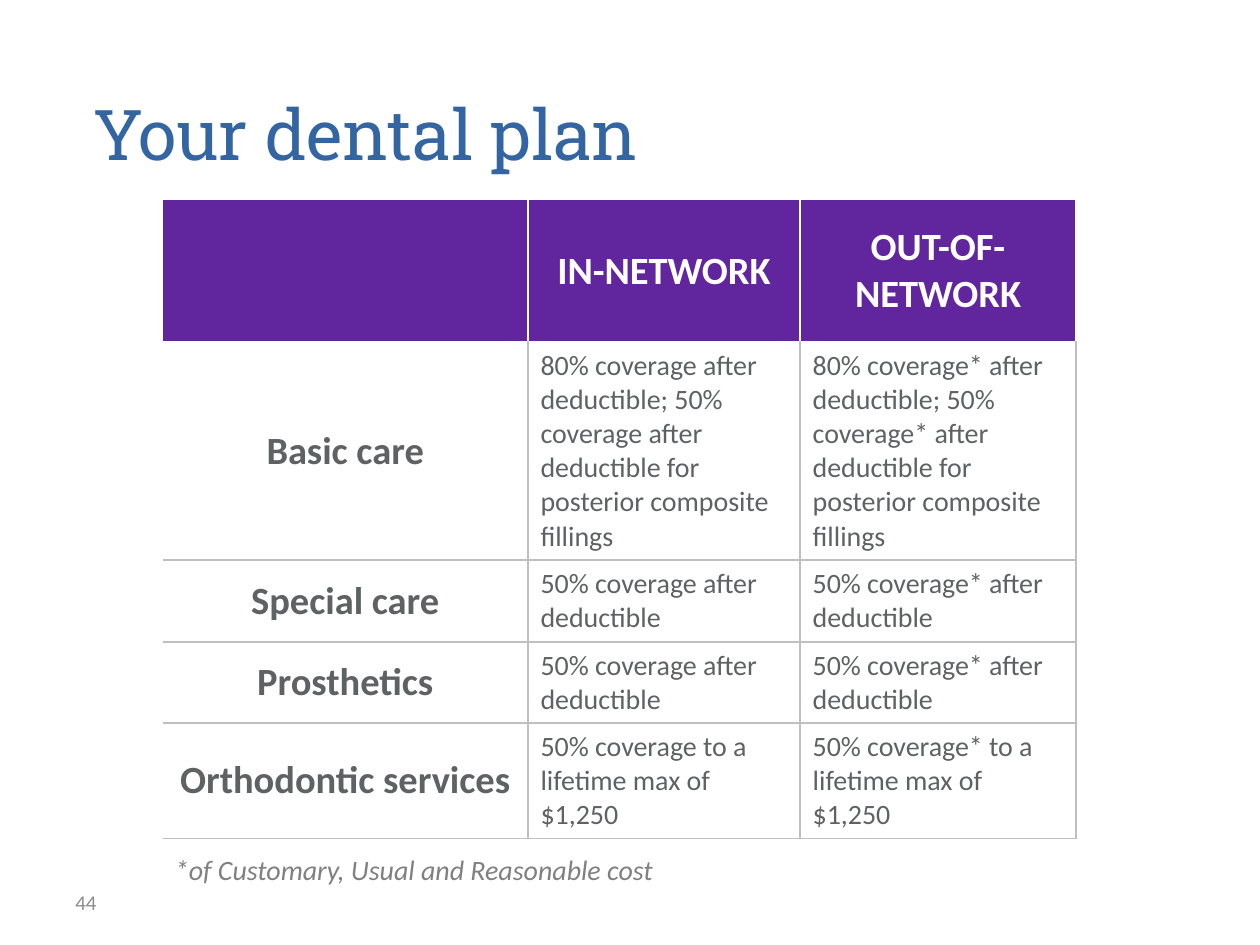
from lxml.etree import SubElement
from pptx import Presentation
from pptx.dml.color import RGBColor
from pptx.enum.text import MSO_ANCHOR as Anchor, PP_ALIGN as Align
from pptx.oxml.ns import qn
from pptx.util import Inches, Pt

WIDTH, HEIGHT = Inches(10), Inches(7.5)
BODY_FONT, TITLE_FONT = "Calibri", "Roboto Slab"
PURPLE, WHITE, RULE, INK = "61259E", "FFFFFF", "BFBFBF", "5E6263"
COLUMNS = [29, 21.6, 21.9]
ROWS = [15, 23.07, 8.67, 8.6, 12.2]
BASIC = ("80% coverage{0} after deductible; 50% coverage{0} after "
         "deductible for posterior composite fillings")
HALF = "50% coverage{0} after deductible"
PLAN = [
    ("Basic care", BASIC),
    ("Special care", HALF),
    ("Prosthetics", HALF),
    ("Orthodontic services", "50% coverage{0} to a lifetime max of $1,250"),
]


def across(percent):
    """Return a share of the slide width."""
    return round(WIDTH * percent / 100)


def down(percent):
    """Return a share of the slide height."""
    return round(HEIGHT * percent / 100)


def paint(target, color):
    """Give a font or fill a hex colour."""
    target.rgb = RGBColor.from_string(color)


def write(frame, text, size, color, font=BODY_FONT, bold=False, italic=False,
          align=Align.LEFT):
    """Put one formatted run into the first paragraph of a frame."""
    para = frame.paragraphs[0]
    para.alignment = align
    span = para.add_run()
    span.text = text
    span.font.name, span.font.size = font, Pt(size)
    span.font.bold, span.font.italic = bold, italic
    paint(span.font.color, color)


def add_text(page, place, text, size, color, anchor=Anchor.TOP, **style):
    """Add a wrapped text box placed in percent of the slide."""
    left, top, width, height = place
    box = page.shapes.add_textbox(across(left), down(top), across(width), down(height))
    frame = box.text_frame
    frame.word_wrap = True
    frame.vertical_anchor = anchor
    write(frame, text, size, color, **style)


def set_borders(cell, **colors):
    """Draw the given cell edges and clear the others."""
    properties = cell._tc.get_or_add_tcPr()
    for edge in "LRTB":
        line = SubElement(properties, qn(f"a:ln{edge}"), w=str(Pt(1)))
        if edge in colors:
            fill = SubElement(line, qn("a:solidFill"))
            SubElement(fill, qn("a:srgbClr"), val=colors[edge])
        else:
            SubElement(line, qn("a:noFill"))


def format_cell(cell, row, column):
    """Apply the borders, fill and anchor that suit a cell's position."""
    color = RULE if row else WHITE
    edges = {"R": color, "B": color}
    if column:
        edges["L"] = color
    if row:
        edges["T"] = WHITE if row == 1 else RULE
    set_borders(cell, **edges)
    if row:
        cell.fill.background()
    else:
        cell.fill.solid()
        paint(cell.fill.fore_color, PURPLE)
    cell.vertical_anchor = Anchor.MIDDLE


def add_plan_table(page):
    """Add the table that compares coverage by network."""
    frame = page.shapes.add_table(len(ROWS), len(COLUMNS), across(12.9), down(21.2),
                                  across(sum(COLUMNS)), down(sum(ROWS)))
    table = frame.table
    for column, share in zip(table.columns, COLUMNS):
        column.width = across(share)
    for row, share in zip(table.rows, ROWS):
        row.height = down(share)
    lines = [("", "IN-NETWORK", "OUT-OF-NETWORK")]
    lines += [(care, cover.format(""), cover.format("*")) for care, cover in PLAN]
    for row, texts in enumerate(lines):
        for column, text in enumerate(texts):
            cell = table.cell(row, column)
            format_cell(cell, row, column)
            heading = row == 0 or column == 0
            if text:
                write(cell.text_frame, text, 22 if heading else 16,
                      INK if row else WHITE, bold=heading,
                      align=Align.CENTER if heading else Align.LEFT)


def main():
    """Build and save the dental plan slide."""
    deck = Presentation()
    deck.slide_width, deck.slide_height = WIDTH, HEIGHT
    page = deck.slides.add_slide(deck.slide_layouts[6])
    add_text(page, (5, 92.8, 23.3, 5.33), "44", 12, "8C8C8C", Anchor.MIDDLE)
    add_plan_table(page)
    add_text(page, (6.4, 8.93, 79, 12.53), "Your dental plan", 40, "3365A2",
             font=TITLE_FONT)
    add_text(page, (12.9, 89.6, 71.6, 4.93),
             "*of Customary, Usual and Reasonable cost", 16, "808080", italic=True)
    deck.save("out.pptx")


if __name__ == "__main__":
    main()
